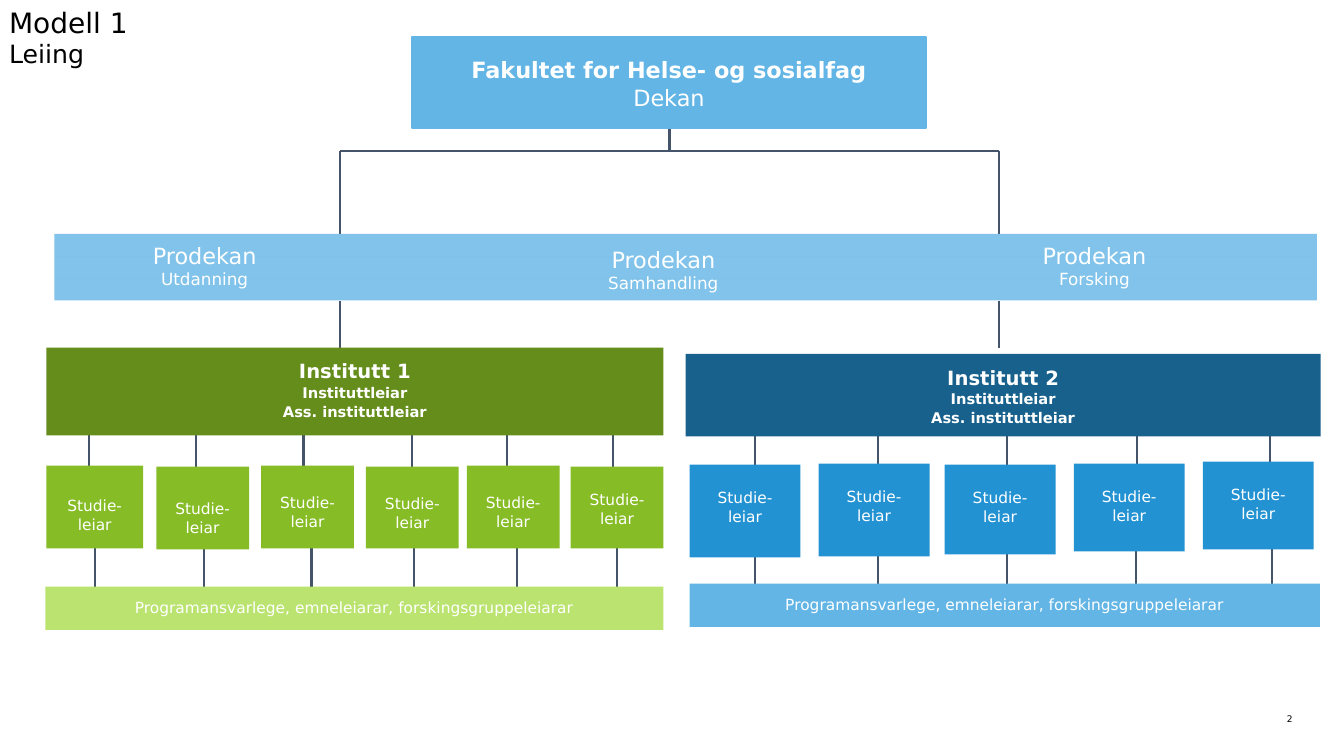
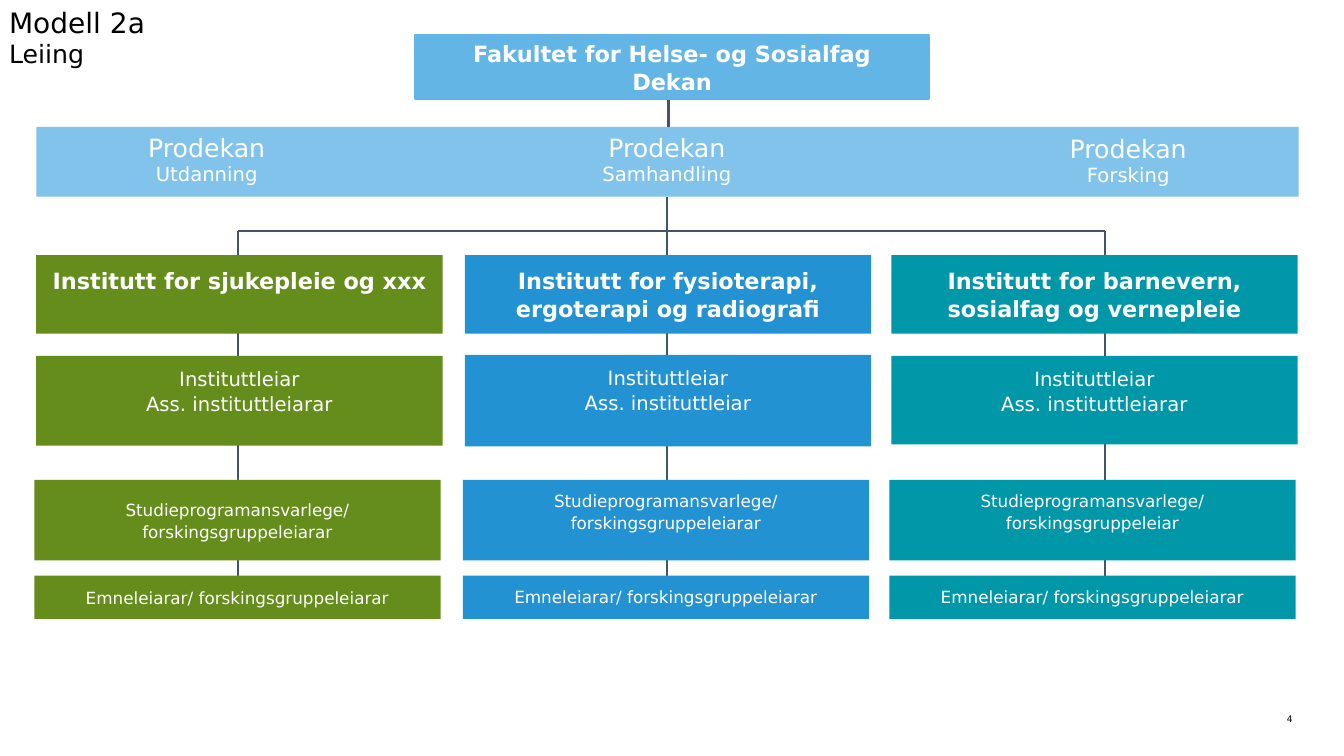
from lxml import etree
from pptx import Presentation
from pptx import util as u
from pptx.dml.color import RGBColor
from pptx.enum import shapes, text
from pptx.oxml import ns

FONT = "DejaVu Sans"
COLORS = {
    "black": "000000",
    "white": "FFFFFF",
    "line": "44546A",
    "sky": "62B5E5",
    "blue": "2392D2",
    "navy": "17618C",
    "olive": "658D1C",
    "green": "86BC25",
    "lime": "BAE370",
    "teal": "0097A9",
}
TOP = text.MSO_ANCHOR.TOP
MIDDLE = text.MSO_ANCHOR.MIDDLE
CENTER = text.PP_ALIGN.CENTER


def rgb(name):
    return RGBColor.from_string(COLORS[name])


def set_font(font, size, color, bold=False):
    font.name = FONT
    font.size = u.Pt(size)
    font.bold = bold
    font.color.rgb = rgb(color)


def set_frame(frame, inset=0, anchor=TOP):
    frame.word_wrap = True
    frame.auto_size = text.MSO_AUTO_SIZE.NONE
    frame.vertical_anchor = anchor
    frame.margin_left = frame.margin_right = u.Inches(inset)
    frame.margin_top = frame.margin_bottom = u.Inches(inset)


def add_two_sizes(paragraph, lines, sizes, color):
    for index, (line, size) in enumerate(zip(lines, sizes)):
        if index:
            paragraph.add_line_break()
        run = paragraph.add_run()
        run.text = line
        set_font(run.font, size, color)


def add_textbox(slide, left, top, width, height):
    shape = slide.shapes.add_textbox(*map(u.Inches, (left, top, width, height)))
    set_frame(shape.text_frame)
    return shape.text_frame.paragraphs[0]


def add_page(presentation, title, number):
    slide = presentation.slides.add_slide(presentation.slide_layouts[5])
    heading = slide.shapes.title
    heading.left, heading.top = u.Inches(0.09), u.Inches(0.05)
    heading.width, heading.height = u.Inches(12.31), u.Inches(0.76)
    set_frame(heading.text_frame)
    paragraph = heading.text_frame.paragraphs[0]
    paragraph.alignment = text.PP_ALIGN.LEFT
    add_two_sizes(paragraph, (title, "Leiing"), (20, 18), "black")
    paragraph = add_textbox(slide, 12.48, 7.08, 0.34, 0.11)
    paragraph.text = number
    paragraph.alignment = text.PP_ALIGN.RIGHT
    set_font(paragraph.font, 6.5, "black")
    return slide


def add_box(slide, bounds, color, lines=(), anchor=TOP, text_top=0.1):
    shape = slide.shapes.add_shape(
        shapes.MSO_SHAPE.RECTANGLE, *map(u.Inches, bounds)
    )
    shape.shadow.inherit = False
    shape.fill.solid()
    shape.fill.fore_color.rgb = rgb(color)
    shape.line.fill.background()
    frame = shape.text_frame
    set_frame(frame, 0.1, anchor)
    frame.margin_top = u.Inches(text_top)
    for index, (line, size, bold) in enumerate(lines):
        paragraph = frame.add_paragraph() if index else frame.paragraphs[0]
        paragraph.text = line
        paragraph.alignment = CENTER
        paragraph.line_spacing = 1.06
        set_font(paragraph.font, size, "white", bold)
    return shape


def add_band(slide, top, left, height):
    shape = add_box(slide, (left, top, 12.52, height), "sky")
    color = shape.fill._xPr.find(".//" + ns.qn("a:srgbClr"))
    etree.SubElement(color, ns.qn("a:alpha")).set("val", "80000")


def add_line(slide, x1, y1, x2, y2):
    line = slide.shapes.add_connector(
        shapes.MSO_CONNECTOR.STRAIGHT, *map(u.Inches, (x1, y1, x2, y2))
    )
    line.line.color.rgb = rgb("line")
    line.line.width = u.Pt(1.5)
    etree.SubElement(line._element.spPr, ns.qn("a:effectLst"))


def add_faculty(slide, bounds, name, dean_bold):
    lines = [(name, 16, True), ("Dekan", 16, dean_bold)]
    shape = add_box(slide, bounds, "sky", lines, MIDDLE)
    shape.line.color.rgb = rgb("sky")
    shape.line.width = u.Pt(1.5)


def add_vice_deans(slide, places, height, sizes):
    for area, (left, top, width) in zip(("Utdanning", "Samhandling", "Forsking"), places):
        paragraph = add_textbox(slide, left, top, width, height)
        paragraph.alignment = CENTER
        add_two_sizes(paragraph, ("Prodekan", area), sizes, "white")


def add_institute(slide, name, head, head_color, anchor, leaders, leader_color,
                  leader_lines, upper, lower, base, base_color):
    for x in upper:
        add_line(slide, x, 4.28, x, 4.66)
    for x in lower:
        add_line(slide, x, 5.38, x, 5.82)
    roles = "Instituttleiar\vAss. instituttleiar"
    add_box(slide, head, head_color, [(name, 14, True), (roles, 10.5, True)], anchor)
    for left, top, width, height, text_top in leaders:
        lines = [(line, 11, False) for line in leader_lines]
        add_box(slide, (left, top, width, height), leader_color, lines, text_top=text_top)
    staff = "Programansvarlege, emneleiarar, forskingsgruppeleiarar"
    add_box(slide, base, base_color, [(staff, 11, False)])


def build_model_1(presentation):
    slide = add_page(presentation, "Modell 1", "2")
    for x in (3.37, 9.91):
        add_line(slide, x, 1.5, x, 2.32)
        add_line(slide, x, 2.99, x, 3.45)
    add_line(slide, 6.64, 1.26, 6.64, 1.5)
    add_line(slide, 3.37, 1.5, 9.91, 1.5)
    add_faculty(slide, (4.09, 0.37, 5.09, 0.9), "Fakultet for Helse- og sosialfag", False)
    add_institute(
        slide, "Institutt 1", (0.46, 3.45, 6.12, 0.87), "olive", TOP,
        [
            (0.46, 4.62, 0.96, 0.82, 0.29),
            (1.55, 4.63, 0.92, 0.82, 0.31),
            (2.59, 4.62, 0.92, 0.82, 0.26),
            (3.63, 4.63, 0.92, 0.81, 0.26),
            (4.63, 4.62, 0.92, 0.82, 0.26),
            (5.66, 4.63, 0.92, 0.81, 0.22),
        ],
        "green", ("Studie-leiar",),
        (0.88, 1.94, 3.01, 4.09, 5.03, 6.08),
        (0.94, 2.02, 3.09, 4.11, 5.13, 6.12),
        (0.45, 5.82, 6.13, 0.43), "lime",
    )
    add_institute(
        slide, "Institutt 2", (6.8, 3.51, 6.3, 0.82), "navy", MIDDLE,
        [
            (6.84, 4.61, 1.1, 0.92, 0.22),
            (8.12, 4.6, 1.1, 0.92, 0.22),
            (9.37, 4.61, 1.1, 0.89, 0.22),
            (10.65, 4.6, 1.1, 0.87, 0.22),
            (11.93, 4.58, 1.1, 0.87, 0.22),
        ],
        "blue", ("Studie-", "leiar"),
        (7.49, 8.71, 9.99, 11.28, 12.6),
        (7.49, 8.71, 9.99, 11.27, 12.62),
        (6.84, 5.79, 6.25, 0.43), "sky",
    )
    for strip in range(3):
        add_band(slide, 2.32 + 0.22 * strip, 0.54, 0.22)
    places = [(0.87, 2.4, 2.32), (3.75, 2.44, 5.66), (9.41, 2.4, 2.89)]
    add_vice_deans(slide, places, 0.47, (16, 12))


def build_model_2a(presentation):
    slide = add_page(presentation, "Modell 2a", "4")
    add_band(slide, 1.26, 0.36, 0.69)
    for x, top in ((2.36, 2.29), (6.62, 1.95), (10.96, 2.29)):
        add_line(slide, x, top, x, 5.75)
    add_line(slide, 6.63, 0.99, 6.63, 1.26)
    add_line(slide, 2.36, 2.29, 10.96, 2.29)
    add_faculty(slide, (4.12, 0.35, 5.09, 0.63), "Fakultet for Helse- og Sosialfag", True)
    places = [(0.89, 1.31, 2.32), (3.78, 1.31, 5.67), (10.03, 1.32, 2.32)]
    add_vice_deans(slide, places, 0.54, (18, 14))
    institutes = [
        ("olive", 0.36, 3.53, 0.89, MIDDLE, "Institutt for sjukepleie og xxx",
         "Ass. instituttleiarar", "forskingsgruppeleiarar"),
        ("blue", 4.61, 3.52, 0.91, TOP, "Institutt for fysioterapi, ergoterapi og radiografi",
         "Ass. instituttleiar", "forskingsgruppeleiarar"),
        ("teal", 8.84, 3.53, 0.88, TOP, "Institutt for barnevern, sosialfag og vernepleie",
         "Ass. instituttleiarar", "forskingsgruppeleiar"),
    ]
    for color, left, top, height, anchor, name, deputy, group_leader in institutes:
        programme = f"Studieprogramansvarlege/ {group_leader}"
        course = "Emneleiarar/ forskingsgruppeleiarar"
        rows = [
            (left, 2.53, 0.78, TOP, [(name, 16, True)]),
            (left, top, height, TOP, [("Instituttleiar", 14, False), (deputy, 14, False)]),
            (left - 0.02, 4.76, 0.8, anchor, [(programme, 12, False)]),
            (left - 0.02, 5.71, 0.43, anchor, [(course, 12, False)]),
        ]
        for row_left, row_top, row_height, row_anchor, lines in rows:
            add_box(slide, (row_left, row_top, 4.03, row_height), color, lines, row_anchor)


def main():
    presentation = Presentation()
    presentation.slide_width = u.Inches(13.33)
    presentation.slide_height = u.Inches(7.5)
    build_model_1(presentation)
    build_model_2a(presentation)
    presentation.save("out.pptx")


if __name__ == "__main__":
    main()
